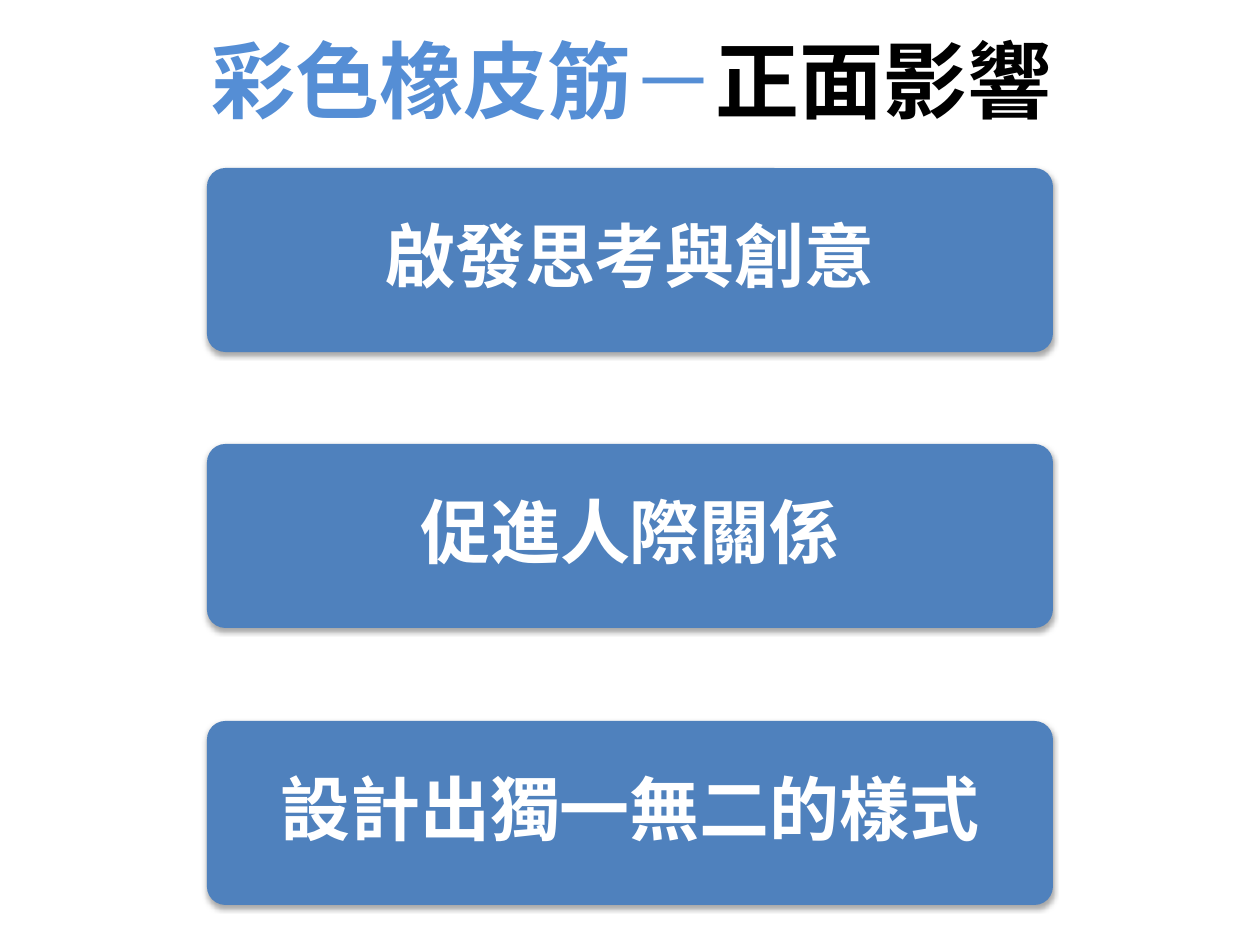
from dataclasses import dataclass

from lxml.etree import SubElement as Sub
from pptx import Presentation
from pptx.dml.color import RGBColor as Rgb
from pptx.enum.shapes import MSO_SHAPE as Kind
from pptx.enum.text import MSO_ANCHOR as Anchor, MSO_AUTO_SIZE as Fit, PP_ALIGN as Align
from pptx.oxml.ns import qn
from pptx.util import Emu, Pt

FACE = "Noto Sans CJK SC"
BLUE, SKY, BLACK, WHITE = "4F81BD", "558ED5", "000000", "FFFFFF"


@dataclass
class Part:
    text: str
    color: str
    bold: bool


@dataclass
class Card:
    text: str
    top: int


def px(n: int) -> Emu:
    return Emu(round(n * 914400 / 126))


def tint(color: str) -> Rgb:
    return Rgb.from_string(color)


def style(para, size: int) -> None:
    para.alignment = Align.CENTER
    para.font.size = Pt(size)
    para.font.name = FACE
    base = para._p.get_or_add_pPr().find(qn("a:defRPr"))
    Sub(base, qn("a:ea"), typeface=FACE)


def shade(shape) -> None:
    shape.shadow.inherit = False
    effect = shape._element.spPr.find(qn("a:effectLst"))
    outer = Sub(effect, qn("a:outerShdw"), blurRad=str(Pt(3.1)),
                dist=str(Pt(1.8)), dir="5400000", rotWithShape="0")
    color = Sub(outer, qn("a:srgbClr"), val=BLACK)
    Sub(color, qn("a:alpha"), val="35000")


def head(slide, parts: list[Part]) -> None:
    title = slide.shapes.title
    title.left, title.top, title.width, title.height = map(px, (117, 0, 1029, 158))
    frame = title.text_frame
    frame.auto_size = Fit.NONE
    frame.vertical_anchor = Anchor.MIDDLE
    para = frame.paragraphs[0]
    style(para, 48)
    for part in parts:
        run = para.add_run()
        run.text = part.text
        run.font.bold = part.bold
        run.font.color.rgb = tint(part.color)


def draw(slide, card: Card) -> None:
    box = slide.shapes.add_shape(
        Kind.ROUNDED_RECTANGLE, px(207), px(card.top), px(846), px(184))
    box.adjustments[0] = 0.1
    box.fill.solid()
    box.fill.fore_color.rgb = tint(BLUE)
    box.line.fill.background()
    shade(box)
    frame = box.text_frame
    frame.word_wrap = True
    frame.vertical_anchor = Anchor.MIDDLE
    frame.margin_left = frame.margin_right = px(21)
    frame.margin_top = frame.margin_bottom = px(21)
    para = frame.paragraphs[0]
    para.text = card.text
    para.line_spacing = 0.9
    para.space_after = Pt(14)
    style(para, 40)
    para.font.bold = True
    para.font.color.rgb = tint(WHITE)


def main() -> None:
    deck = Presentation()
    deck.slide_width, deck.slide_height = px(1260), px(945)
    slide = deck.slides.add_slide(deck.slide_layouts[5])
    head(slide, [
        Part("彩色橡皮筋", SKY, True),
        Part("－", SKY, False),
        Part("正面影響", BLACK, True),
    ])
    texts = ["啟發思考與創意", "促進人際關係", "設計出獨一無二的樣式"]
    for i, text in enumerate(texts):
        draw(slide, Card(text, 168 + i * 553 // 2))
    deck.save("out.pptx")


if __name__ == "__main__":
    main()
